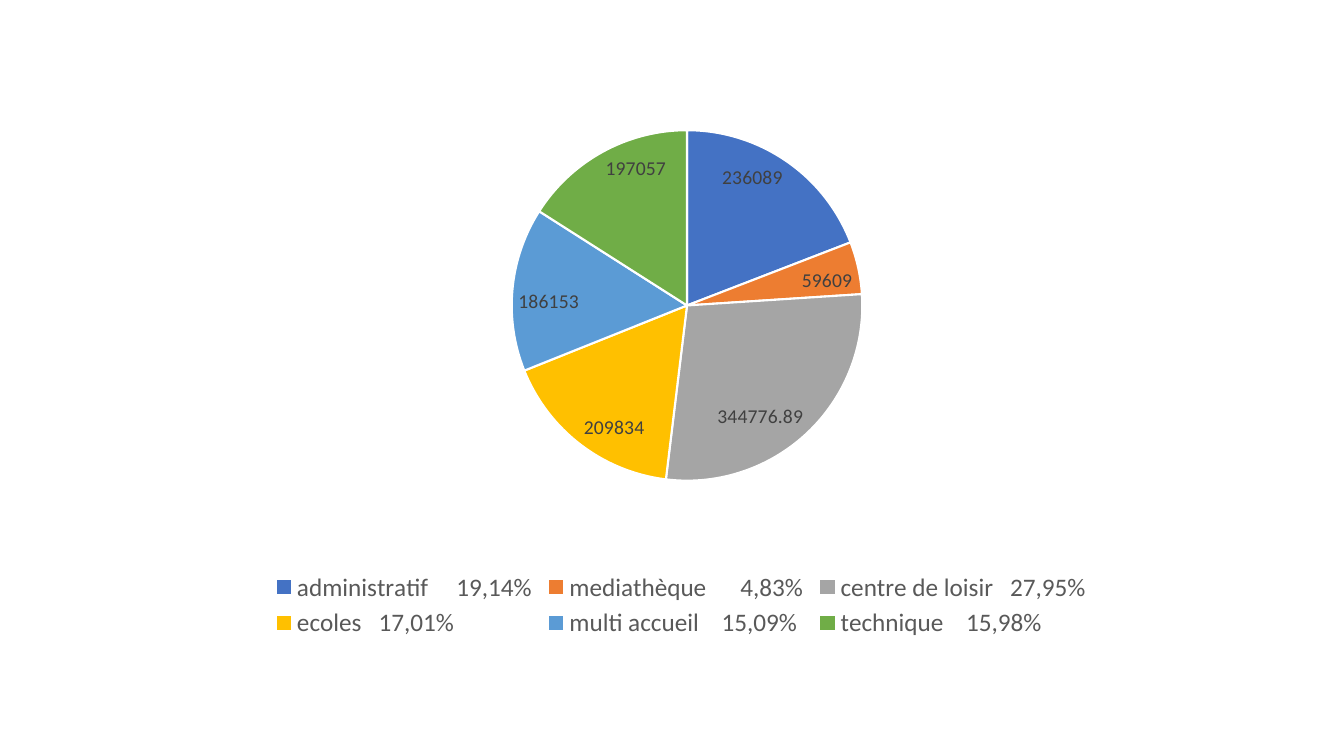
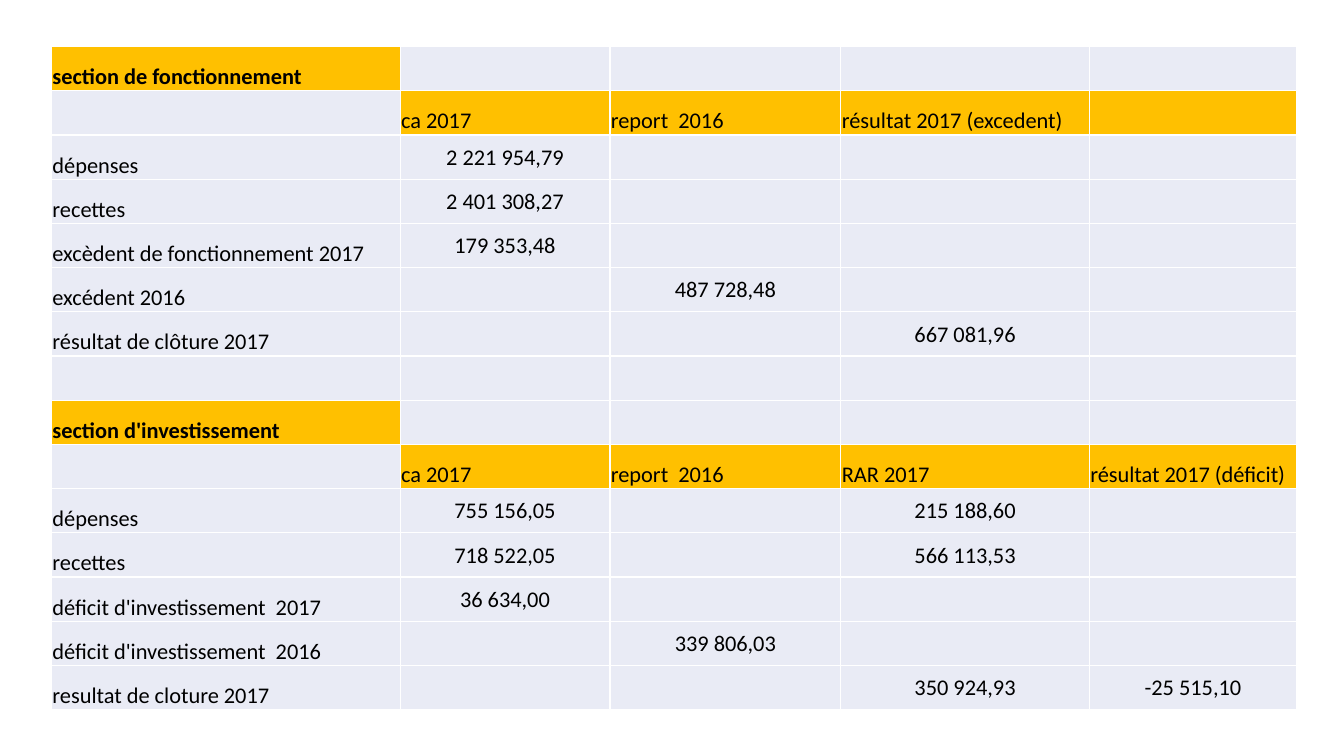
from lxml.etree import SubElement
from pptx import Presentation
from pptx.chart.data import CategoryChartData
from pptx.dml.color import RGBColor
from pptx.enum.chart import XL_CHART_TYPE as ChartType
from pptx.enum.chart import XL_LABEL_POSITION as LabelPosition
from pptx.enum.chart import XL_LEGEND_POSITION as LegendPosition
from pptx.enum.text import MSO_ANCHOR as Anchor
from pptx.enum.text import PP_ALIGN as Align
from pptx.oxml import parse_xml
from pptx.oxml.ns import nsdecls, qn
from pptx.util import Inches, Pt

BLACK = RGBColor(0x00, 0x00, 0x00)
WHITE = RGBColor(0xFF, 0xFF, 0xFF)
CHARCOAL = RGBColor(0x40, 0x40, 0x40)
SLATE = RGBColor(0x59, 0x59, 0x59)
BLUE = RGBColor(0x44, 0x72, 0xC4)
ORANGE = RGBColor(0xED, 0x7D, 0x31)
GREY = RGBColor(0xA5, 0xA5, 0xA5)
AMBER = RGBColor(0xFF, 0xC0, 0x00)
SKY = RGBColor(0x5B, 0x9B, 0xD5)
GREEN = RGBColor(0x70, 0xAD, 0x47)
PALE = RGBColor(0xE9, 0xEB, 0xF5)

SERVICES = [
    ("administratif     19,14%", 236089, BLUE),
    ("mediathèque      4,83%", 59609, ORANGE),
    ("centre de loisir   27,95%", 344776.89, GREY),
    ("ecoles   17,01%", 209834, AMBER),
    ("multi accueil    15,09%", 186153, SKY),
    ("technique    15,98%", 197057, GREEN),
]

OPERATING = (
    "section de fonctionnement",
    ["ca 2017", "report  2016", "résultat 2017 (excedent)", ""],
    [
        ["dépenses", "2 221 954,79", "", "", ""],
        ["recettes", "2 401 308,27", "", "", ""],
        ["excèdent de fonctionnement 2017", "179 353,48", "", "", ""],
        ["excédent 2016", "", "487 728,48", "", ""],
        ["résultat de clôture 2017", "", "", "667 081,96", ""],
    ],
)
INVESTMENT = (
    "section d'investissement",
    ["ca 2017", "report  2016", "RAR 2017", "résultat 2017 (déficit)"],
    [
        ["dépenses", "755 156,05", "", "215 188,60", ""],
        ["recettes", "718 522,05", "", "566 113,53", ""],
        ["déficit d'investissement  2017", "36 634,00", "", "", ""],
        ["déficit d'investissement  2016", "", "339 806,03", "", ""],
        ["resultat de cloture 2017", "", "", "350 924,93", "-25 515,10"],
    ],
)
COLUMN_PERCENTS = [28, 16.85, 18.55, 19.95, 16.65]


class Report:
    font_name = "Calibri"

    def __init__(self):
        self.deck = Presentation()
        self.deck.slide_width = Inches(13.33)
        self.deck.slide_height = Inches(7.5)
        self.page = None

    def add_page(self):
        self.page = self.deck.slides.add_slide(self.deck.slide_layouts[6])

    def frame(self, left, top, width, height):
        across, down = self.deck.slide_width, self.deck.slide_height
        sides = ((left, across), (top, down), (width, across), (height, down))
        return [round(length * percent / 100) for percent, length in sides]

    def style(self, font, size, color, bold=False):
        font.name = self.font_name
        font.size = Pt(size)
        font.bold = bold
        font.color.rgb = color

    def pie(self, frame, plot, slices):
        data = CategoryChartData()
        data.categories = [name for name, _, _ in slices]
        data.add_series("Series 1", [value for _, value, _ in slices])
        chart = self.page.shapes.add_chart(
            ChartType.PIE, *self.frame(*frame), data).chart
        chart.has_title = False
        self.style(chart.font, 10, BLACK)
        chart.has_legend = True
        chart.legend.position = LegendPosition.BOTTOM
        chart.legend.include_in_layout = False
        self.style(chart.legend.font, 18, SLATE)
        pie = chart.plots[0]
        pie.vary_by_categories = True
        for index, (_, _, color) in enumerate(slices):
            form = pie.series[0].points[index].format
            form.fill.solid()
            form.fill.fore_color.rgb = color
            form.line.color.rgb = WHITE
            form.line.width = Pt(1.5)
        pie.has_data_labels = True
        labels = pie.data_labels
        labels.show_value = True
        labels.show_percentage = False
        labels.position = LabelPosition.INSIDE_END
        self.style(labels.font, 14, CHARCOAL)
        self.place_plot(chart, plot)

    def place_plot(self, chart, percents):
        area = chart.element.find(".//" + qn("c:plotArea"))
        for layout in area.findall(qn("c:layout")):
            area.remove(layout)
        layout = parse_xml(f"<c:layout {nsdecls('c')}/>")
        area.insert(0, layout)
        manual = SubElement(layout, qn("c:manualLayout"))
        settings = [("layoutTarget", "inner"), ("xMode", "edge"), ("yMode", "edge")]
        settings += [(side, str(percent / 100)) for side, percent in zip("xywh", percents)]
        for tag, value in settings:
            SubElement(manual, qn(f"c:{tag}")).set("val", value)

    def table(self, frame, column_percents, sections):
        rows = []
        for title, headings, entries in sections:
            if rows:
                rows.append(("gap", [""] * len(column_percents)))
            rows.append(("title", [title] + [""] * len(headings)))
            rows.append(("headings", [""] + headings))
            rows += [("entry", entry) for entry in entries]
        box = self.frame(*frame)
        table = self.page.shapes.add_table(len(rows), len(column_percents), *box).table
        table.first_row = False
        table.horz_banding = False
        for column, percent in zip(table.columns, column_percents):
            column.width = round(box[2] * percent / 100)
        for row, (kind, texts) in zip(table.rows, rows):
            row.height = round(box[3] / len(rows))
            for index, (cell, text) in enumerate(zip(row.cells, texts)):
                self.fill_cell(cell, text, kind, index)

    def fill_cell(self, cell, text, kind, index):
        marked = (kind == "title" and index == 0) or (kind == "headings" and index > 0)
        amount = kind == "entry" and index > 0
        cell.margin_left = cell.margin_right = cell.margin_top = Inches(0.01)
        cell.margin_bottom = 0
        cell.vertical_anchor = Anchor.MIDDLE if amount else Anchor.BOTTOM
        cell.text = text
        para = cell.text_frame.paragraphs[0]
        para.alignment = Align.CENTER if amount else Align.LEFT
        self.style(para.font, 16, BLACK, kind == "title")
        properties = cell._tc.get_or_add_tcPr()
        for edge in ("lnL", "lnR", "lnT", "lnB"):
            line = SubElement(properties, qn(f"a:{edge}"), w=str(Pt(1)))
            paint = SubElement(line, qn("a:solidFill"))
            SubElement(paint, qn("a:srgbClr"), val=str(WHITE))
        cell.fill.solid()
        cell.fill.fore_color.rgb = AMBER if marked else PALE


def main():
    report = Report()
    report.add_page()
    report.pie((10.73, 13.73, 79.9, 71.33), (1.1, 4.9, 98.9, 65), SERVICES)
    report.add_page()
    report.table((3.83, 6.15, 92.65, 87.73), COLUMN_PERCENTS, [OPERATING, INVESTMENT])
    report.deck.save("out.pptx")


if __name__ == "__main__":
    main()
